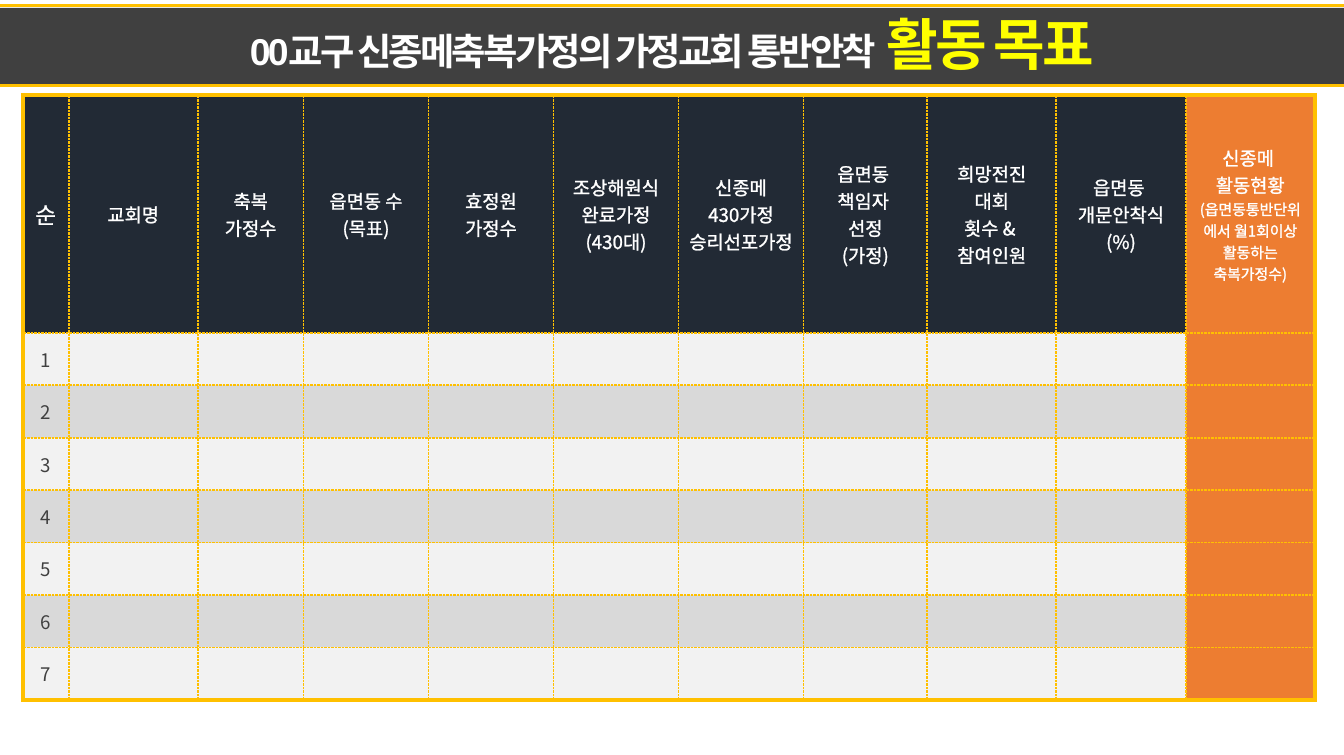
from collections import namedtuple
from dataclasses import dataclass

from lxml import etree
from pptx import Presentation
from pptx import util as u
from pptx.dml.color import RGBColor
from pptx.enum import shapes, text
from pptx.oxml import ns

Box = namedtuple("Box", "left top width height")


@dataclass(frozen=True)
class Theme:
    white: str = "FFFFFF"
    charcoal: str = "404040"
    gold: str = "FFC000"
    yellow: str = "FFFF00"
    navy: str = "222A35"
    orange: str = "ED7D31"
    stripes: tuple = ("F2F2F2", "D9D9D9")
    title_font: str = "Arial"
    table_font: str = "Noto Sans CJK KR"
    title_size: float = 40
    gap_size: float = 48
    goal_size: float = 60
    order_size: float = 24
    cell_size: float = 20
    note_size: float = 16
    title_spacing: int = -300
    band_line: float = 3
    frame_line: float = 4.5
    grid_line: float = 2.25
    outline: float = 0.75


THEME = Theme()
COLUMN_WIDTHS = [1.73, 4.88, 3.99, 4.72, 4.72, 4.72, 4.72, 4.67, 4.88, 4.88, 4.88]
HEADER_HEIGHT = 8.99
CHURCH_COUNT = 7
HEADINGS = [
    ["순"],
    ["교회명"],
    ["축복", "가정수"],
    ["읍면동 수", "(목표)"],
    ["효정원", "가정수"],
    ["조상해원식", "완료가정", "(430대)"],
    ["신종메", "430가정", "승리선포가정"],
    ["읍면동 ", "책임자 ", "선정", "(가정)"],
    ["희망전진", "대회", "횟수 & ", "참여인원"],
    ["읍면동 ", "개문안착식(%)"],
    ["신종메 ", "활동현황", "(읍면동통반단위에서 월1회이상 활동하는 축복가정수)"],
]


def add_line_fill(parent, tag, color, width, dash=None):
    line = etree.SubElement(parent, ns.qn(tag), w=str(u.Pt(width)))
    fill = etree.SubElement(line, ns.qn("a:solidFill"))
    etree.SubElement(fill, ns.qn("a:srgbClr"), val=color)
    if dash:
        etree.SubElement(line, ns.qn("a:prstDash"), val=dash)
    return line


def add_run(paragraph, words, size, color, font):
    run = paragraph.add_run()
    run.text = words
    run.font.size = u.Pt(size)
    run.font.color.rgb = RGBColor.from_string(color)
    run.font.name = font
    properties = run.font._element
    etree.SubElement(properties, ns.qn("a:ea"), typeface=THEME.table_font)
    return run


def add_title_band(slide, box):
    band = slide.shapes.add_shape(shapes.MSO_SHAPE.RECTANGLE, *map(u.Cm, box))
    band.shadow.inherit = False
    band.fill.solid()
    band.fill.fore_color.rgb = RGBColor.from_string(THEME.charcoal)
    band.line.fill.background()
    for y in (box.top + box.height, box.top - 0.1):
        rule = slide.shapes.add_connector(
            shapes.MSO_CONNECTOR.STRAIGHT,
            u.Cm(box.left - 0.23), u.Cm(y),
            u.Cm(box.left + box.width + 0.33), u.Cm(y),
        )
        rule.line.color.rgb = RGBColor.from_string(THEME.gold)
        rule.line.width = u.Pt(THEME.band_line)
        etree.SubElement(rule._element.spPr, ns.qn("a:effectLst"))


def add_title(slide, box):
    frame = slide.shapes.add_textbox(*map(u.Cm, box)).text_frame
    frame.word_wrap = True
    frame.vertical_anchor = text.MSO_ANCHOR.MIDDLE
    frame.margin_left = frame.margin_right = 0
    title = frame.paragraphs[0]
    title.alignment = text.PP_ALIGN.CENTER
    for words, size, color in (
        ("00교구 신종메축복가정의 가정교회 통반안착", THEME.title_size, THEME.white),
        (" ", THEME.gap_size, THEME.white),
        ("활동 목표", THEME.goal_size, THEME.yellow),
    ):
        run = add_run(title, words, size, color, THEME.title_font)
        run.font.bold = True
        run.font._element.set("spc", str(THEME.title_spacing))


def style_cell(cell, fill, framed_sides):
    properties = cell._tc.get_or_add_tcPr()
    for side, framed in zip("LRTB", framed_sides):
        width = THEME.frame_line if framed else THEME.grid_line
        dash = "solid" if framed else "sysDot"
        add_line_fill(properties, f"a:ln{side}", THEME.gold, width, dash)
    cell.fill.solid()
    cell.fill.fore_color.rgb = RGBColor.from_string(fill)
    cell.vertical_anchor = text.MSO_ANCHOR.MIDDLE
    cell.margin_left = cell.margin_right = u.Cm(0.38)
    cell.margin_top = cell.margin_bottom = u.Cm(0.18)


def write_cell(cell, lines, sizes, color):
    frame = cell.text_frame
    for index, (words, size) in enumerate(zip(lines, sizes)):
        paragraph = frame.add_paragraph() if index else frame.paragraphs[0]
        paragraph.alignment = text.PP_ALIGN.CENTER
        run = add_run(paragraph, words, size, color, THEME.table_font)
        properties = run.font._element
        properties.insert(0, add_line_fill(properties, "a:ln", color, THEME.outline))


def add_goal_table(slide, box):
    row_count, column_count = CHURCH_COUNT + 1, len(HEADINGS)
    table = slide.shapes.add_table(row_count, column_count, *map(u.Cm, box)).table
    table.first_row = table.horz_banding = False
    for column, width in zip(table.columns, COLUMN_WIDTHS):
        column.width = u.Cm(width)
    church_height = (box.height - HEADER_HEIGHT) / CHURCH_COUNT
    last_row, last_column = row_count - 1, column_count - 1
    for r, row in enumerate(table.rows):
        row.height = u.Cm(church_height if r else HEADER_HEIGHT)
        row_fill = THEME.stripes[(r - 1) % 2] if r else THEME.navy
        for c, cell in enumerate(row.cells):
            fill = THEME.orange if c == last_column else row_fill
            style_cell(cell, fill, (c == 0, c == last_column, r == 0, r == last_row))
            if r == 0:
                sizes = [THEME.cell_size] * len(HEADINGS[c])
                if c == 0:
                    sizes[0] = THEME.order_size
                elif c == last_column:
                    sizes[-1] = THEME.note_size
                write_cell(cell, HEADINGS[c], sizes, THEME.white)
            elif c == 0:
                write_cell(cell, [str(r)], [THEME.cell_size], THEME.charcoal)


def main():
    deck = Presentation()
    deck.slide_width, deck.slide_height = u.Cm(50.75), u.Cm(28.52)
    slide = deck.slides.add_slide(deck.slide_layouts[6])
    add_title_band(slide, Box(-0.33, 0.3, 51.31, 2.92))
    add_title(slide, Box(0, 0.3, 50.75, 2.69))
    add_goal_table(slide, Box(0.86, 3.58, sum(COLUMN_WIDTHS), 22.86))
    deck.save("out.pptx")


if __name__ == "__main__":
    main()
